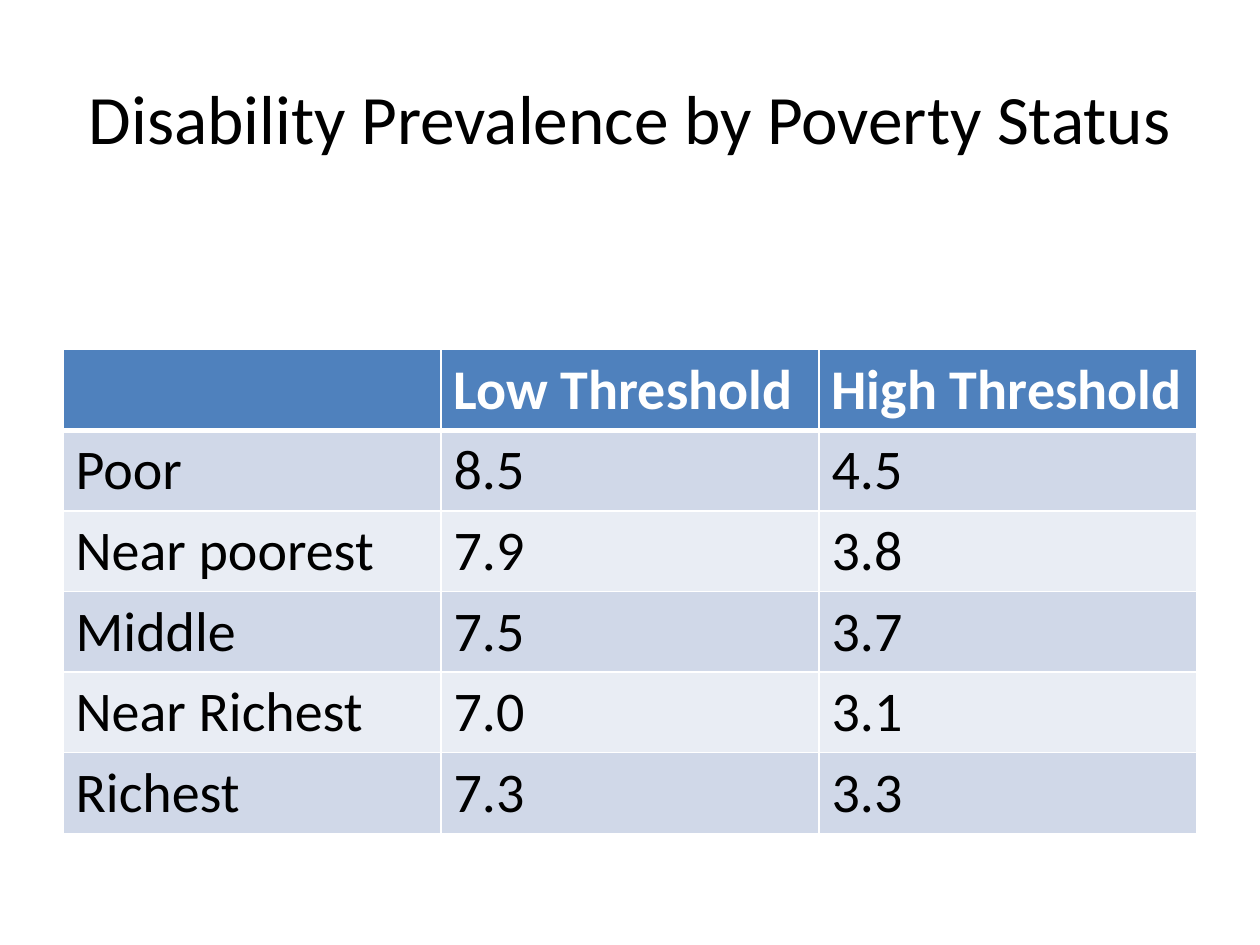
"""Build the slide on disability prevalence by poverty status."""
from dataclasses import dataclass

from lxml.etree import SubElement
from pptx import Presentation
from pptx.dml.color import RGBColor
from pptx.enum.text import MSO_ANCHOR, PP_ALIGN
from pptx.oxml.ns import qn
from pptx.util import Inches, Pt


@dataclass(frozen=True)
class Theme:
    font: str = "Calibri"
    title_size: float = 39.6
    table_size: float = 32
    text: str = "000000"
    white: str = "FFFFFF"
    header: str = "4F81BD"
    bands: tuple = ("E9EDF4", "D0D8E8")
    thin: float = 1
    thick: float = 3


def style(p, size, color, bold=False):
    for r in p.runs:
        f = r.font
        f.name, f.size, f.bold = theme.font, Pt(size), bold
        f.color.rgb = RGBColor.from_string(color)


def border(cell, side, width):
    ln = SubElement(cell._tc.get_or_add_tcPr(), qn(f"a:ln{side}"), w=str(Pt(width)))
    fill = SubElement(ln, qn("a:solidFill"))
    SubElement(fill, qn("a:srgbClr"), val=theme.white)


theme = Theme()
rows = [
    ("", "Low Threshold", "High Threshold"),
    ("Poor", "8.5", "4.5"),
    ("Near poorest", "7.9", "3.8"),
    ("Middle", "7.5", "3.7"),
    ("Near Richest", "7.0", "3.1"),
    ("Richest", "7.3", "3.3"),
]

prs = Presentation()
prs.slide_width, prs.slide_height = Inches(10), Inches(7.5)
W, H = prs.slide_width, prs.slide_height
margin, content_w = int(W * 0.05), int(W * 0.9)
row_h = Inches(0.64)
s = prs.slides.add_slide(prs.slide_layouts[6])

title = s.shapes.add_textbox(margin, int(H * 0.04), content_w, Inches(1.25))
tf = title.text_frame
tf.word_wrap = True
tf.vertical_anchor = MSO_ANCHOR.MIDDLE
tf.text = "Disability Prevalence by Poverty Status"
p = tf.paragraphs[0]
p.alignment = PP_ALIGN.CENTER
style(p, theme.title_size, theme.text)

table = s.shapes.add_table(len(rows), len(rows[0]), margin, int(H * 0.37),
                           content_w, row_h * len(rows)).table
for i, row in enumerate(rows):
    table.rows[i].height = row_h
    head = i == 0
    for j, text in enumerate(row):
        cell = table.cell(i, j)
        for side in "LRTB":
            heavy = (i, side) in ((0, "B"), (1, "T"))
            border(cell, side, theme.thick if heavy else theme.thin)
        cell.fill.solid()
        cell.fill.fore_color.rgb = RGBColor.from_string(
            theme.header if head else theme.bands[i % 2])
        cell.text_frame.text = text
        style(cell.text_frame.paragraphs[0], theme.table_size,
              theme.white if head else theme.text, head)

prs.save("out.pptx")
